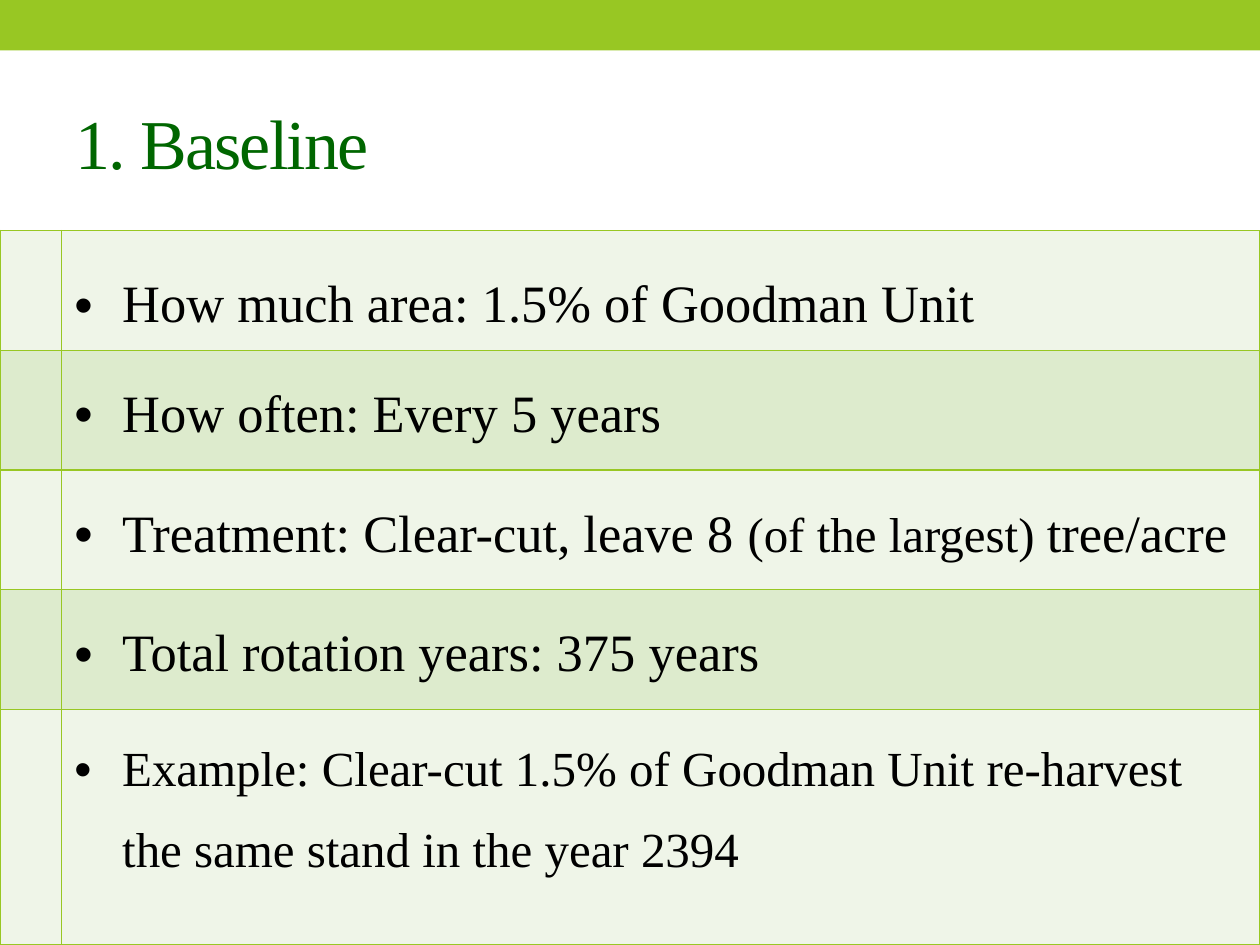
from pptx import Presentation
from pptx import util as u
from pptx.dml.color import RGBColor
from pptx.enum import shapes, text
from pptx.oxml import ns
from lxml import etree

LIME = "98C723"
DARK_GREEN = "006600"
BLACK = "000000"
BANDS = ["EFF5E8", "DDEBCD"]
FONT = "Times New Roman"
COLUMN_WIDTHS = [0.49, 9.51]
ROW_HEIGHTS = [0.95] * 4 + [1.87]
POINTS = [
    [("How much area: 1.5% of Goodman Unit", 30)],
    [("How often: Every 5 years", 30)],
    [("Treatment: Clear-cut, leave 8 ", 30), ("(of the largest) ", 28), ("tree/acre", 30)],
    [("Total rotation years: 375 years", 30)],
    [("Example: Clear-cut 1.5% of Goodman Unit re-harvest the same stand in the year 2394", 28)],
]


def color(value):
    return RGBColor.from_string(value)


def add_xml(parent, tag, **attributes):
    return etree.SubElement(parent, ns.qn(tag), attributes)


def add_text(paragraph, content, size=30, fill=BLACK, spacing=None):
    run = paragraph.add_run()
    run.text = content
    run.font.name = FONT
    run.font.size = u.Pt(size)
    run.font.color.rgb = color(fill)
    if spacing is not None:
        run.font._element.set("spc", str(int(spacing * 100)))


def set_bullet(paragraph, indent):
    properties = paragraph._p.get_or_add_pPr()
    properties.set("marL", str(u.Inches(indent)))
    properties.set("indent", str(-u.Inches(indent)))
    add_xml(properties, "a:buFont", typeface="Arial")
    add_xml(properties, "a:buChar", char="•")


def set_borders(cell, value, width):
    properties = cell._tc.get_or_add_tcPr()
    for position, side in enumerate(("a:lnL", "a:lnR", "a:lnT", "a:lnB")):
        line = etree.Element(ns.qn(side), {"w": str(u.Pt(width))})
        add_xml(add_xml(line, "a:solidFill"), "a:srgbClr", val=value)
        properties.insert(position, line)


class SlideBuilder:
    def __init__(self, presentation):
        self.slide = presentation.slides.add_slide(presentation.slide_layouts[5])

    def bar(self, left, top, width, height):
        shape = self.slide.shapes.add_shape(
            shapes.MSO_SHAPE.RECTANGLE, *map(u.Inches, (left, top, width, height)))
        shape.shadow.inherit = False
        shape.fill.solid()
        shape.fill.fore_color.rgb = color(LIME)
        shape.line.fill.background()

    def title(self, content, left, top, width, height):
        title = self.slide.shapes.title
        title.left, title.top, title.width, title.height = map(
            u.Inches, (left, top, width, height))
        title.text_frame.vertical_anchor = text.MSO_ANCHOR.MIDDLE
        paragraph = title.text_frame.paragraphs[0]
        paragraph.alignment = text.PP_ALIGN.LEFT
        add_text(paragraph, content, size=40, fill=DARK_GREEN, spacing=-1)

    def bullet_table(self, left, top, points):
        frame = self.slide.shapes.add_table(
            len(points), len(COLUMN_WIDTHS), u.Inches(left), u.Inches(top),
            u.Inches(sum(COLUMN_WIDTHS)), u.Inches(sum(ROW_HEIGHTS)))
        table = frame.table
        table.first_row = table.horz_banding = False
        for column, width in zip(table.columns, COLUMN_WIDTHS):
            column.width = u.Inches(width)
        for index, (row, height, runs) in enumerate(zip(table.rows, ROW_HEIGHTS, points)):
            row.height = u.Inches(height)
            for cell in row.cells:
                cell.fill.solid()
                cell.fill.fore_color.rgb = color(BANDS[index % 2])
                set_borders(cell, LIME, 1)
            self.bullet(row.cells[1], runs)
        table.cell(0, 1).vertical_anchor = text.MSO_ANCHOR.MIDDLE

    def bullet(self, cell, runs):
        paragraph = cell.text_frame.paragraphs[0]
        paragraph.line_spacing = 1.5
        paragraph.space_before = u.Pt(6)
        set_bullet(paragraph, 0.38)
        for content, size in runs:
            add_text(paragraph, content, size=size)


def main():
    presentation = Presentation()
    presentation.slide_width = u.Inches(10)
    presentation.slide_height = u.Inches(7.5)
    builder = SlideBuilder(presentation)
    builder.bar(0, 0, 10, 0.4)
    builder.title("1. Baseline", 0.5, 0.58, 9, 1.08)
    builder.bullet_table(0, 1.83, POINTS)
    presentation.save("out.pptx")


if __name__ == "__main__":
    main()
